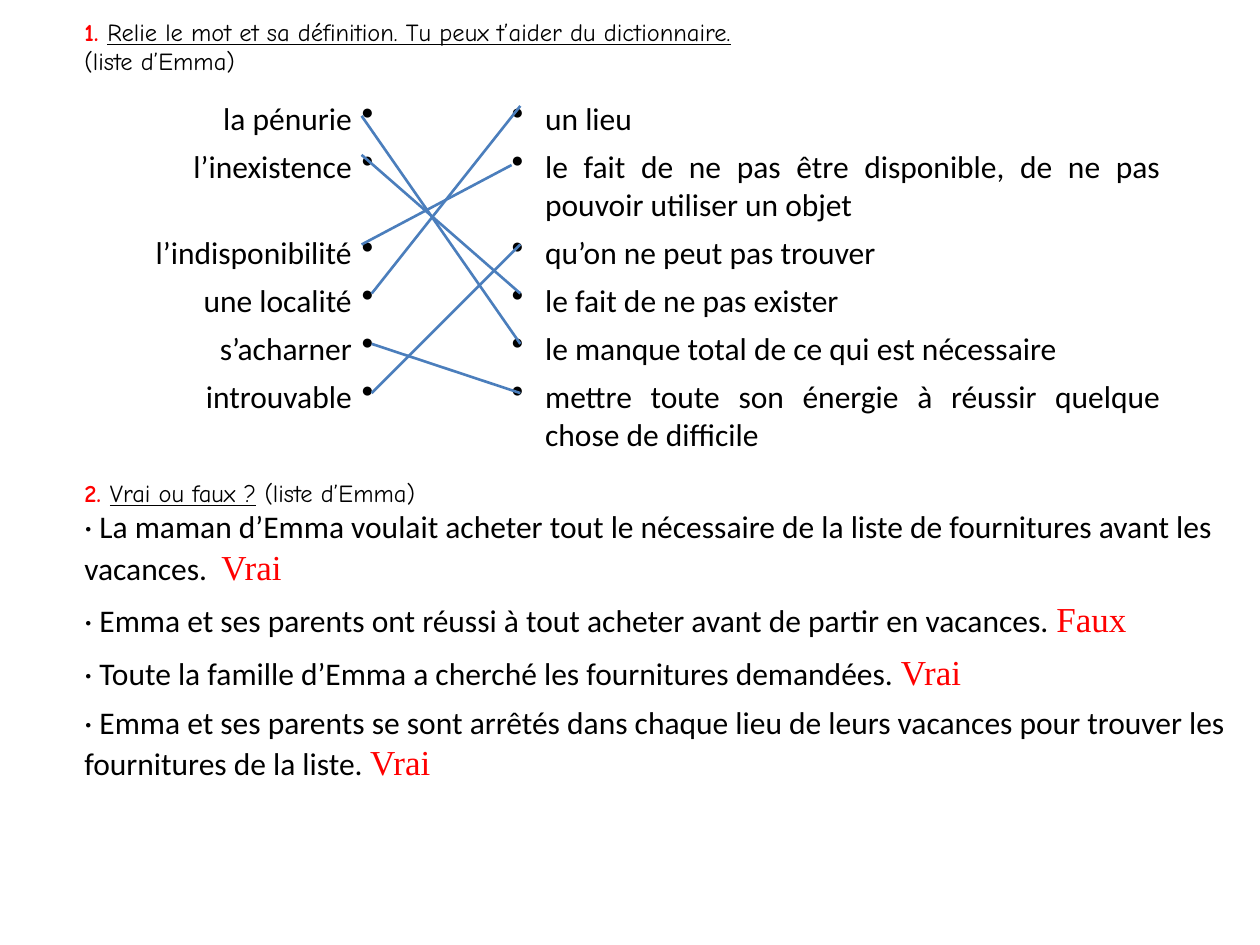
import pptx
import pptx.util
import pptx.dml.color
import pptx.enum.shapes
import pptx.enum.text
import pptx.oxml.ns
import lxml.etree

Pt = pptx.util.Pt
RGB = pptx.dml.color.RGBColor
ALIGN = pptx.enum.text.PP_ALIGN
BLACK = RGB(0x00, 0x00, 0x00)
RED = RGB(0xFF, 0x00, 0x00)
BLUE = RGB(0x4B, 0x7E, 0xBC)

LEFT = 48.24
COLS = [155.5, 13.7, 72, 19.4, 357.1]
ONE, TWO = 27.36, 49.25  # heights of rows with one and two lines
INSET = 2.7

ROWS = [
    ("la pénurie", "un lieu", ONE),
    ("l’inexistence", "le fait de ne pas être disponible, de ne pas pouvoir utiliser un objet", TWO),
    ("l’indisponibilité", "qu’on ne peut pas trouver", ONE),
    ("une localité", "le fait de ne pas exister", ONE),
    ("s’acharner", "le manque total de ce qui est nécessaire", ONE),
    ("introuvable", "mettre toute son énergie à réussir quelque chose de difficile", TWO),
]

# Start and end of each link, from the corner of the word table
LINKS = [
    (158.4, 11.5, 249.1, 141.8),
    (158.4, 33.8, 249.1, 113),
    (158.4, 85, 244.1, 39.6),
    (164.2, 113, 249.1, 5.8),
    (164.2, 141.8, 249.1, 169.9),
    (164.2, 169.9, 249.1, 85),
]

CLAIMS = [
    ("·\u00a0La maman d’Emma voulait acheter tout le nécessaire de la liste de fournitures avant les vacances.  ", "Vrai"),
    ("·\u00a0Emma et ses parents ont réussi à tout acheter avant de partir en vacances. ", "Faux"),
    ("·\u00a0Toute la famille d’Emma a cherché les fournitures demandées. ", "Vrai"),
    ("·\u00a0Emma et ses parents se sont arrêtés dans chaque lieu de leurs vacances pour trouver les fournitures de la liste. ", "Vrai"),
]


def write(para, text, size=18, font="Calibri", color=BLACK, bold=False, under=False):
    run = para.add_run()
    run.text = text
    run.font.size = Pt(size)
    run.font.name = font
    run.font.color.rgb = color
    run.font.bold = bold
    run.font.underline = under


def add_frame(slide, left, top, width, height):
    """Add a wrapping text box without margins and return its text frame."""
    frame = slide.shapes.add_textbox(Pt(left), Pt(top), Pt(width), Pt(height)).text_frame
    frame.word_wrap = True
    frame.vertical_anchor = pptx.enum.text.MSO_ANCHOR.MIDDLE
    frame.margin_left = frame.margin_right = 0
    frame.margin_top = frame.margin_bottom = 0
    return frame


def add_title(slide, left, top, width, height, number, title, source, split=False):
    """Add an exercise title; split puts the source on its own line."""
    frame = add_frame(slide, left, top, width, height)
    para = frame.paragraphs[0]
    write(para, number + " ", size=14, font="Comic Neue", color=RED, bold=True)
    write(para, title, size=14, font="Comic Neue", under=True)
    if split:
        para = frame.add_paragraph()
    else:
        source = " " + source
    write(para, source, size=14, font="Comic Neue")


def add_words(slide, left, top):
    height = sum(row[2] for row in ROWS)
    table = slide.shapes.add_table(
        len(ROWS), len(COLS), Pt(left), Pt(top), Pt(sum(COLS)), Pt(height)).table
    table.first_row = table.horz_banding = False
    for col, width in zip(table.columns, COLS):
        col.width = Pt(width)
    for row, (word, sense, tall) in zip(table.rows, ROWS):
        row.height = Pt(tall)
        for i, text in enumerate([word, "●", "", "●", sense]):
            cell = row.cells[i]
            cell.fill.background()
            cell.margin_left = cell.margin_right = Pt(INSET)
            cell.margin_top = cell.margin_bottom = Pt(INSET)
            para = cell.text_frame.paragraphs[0]
            para.alignment = ALIGN.RIGHT if i == 0 else ALIGN.JUSTIFY
            if text == "●":
                write(para, text, size=12, font="Arial")
            elif text:
                write(para, text)


def add_links(slide, left, top):
    for x1, y1, x2, y2 in LINKS:
        link = slide.shapes.add_connector(
            pptx.enum.shapes.MSO_CONNECTOR.STRAIGHT,
            Pt(left + x1), Pt(top + y1), Pt(left + x2), Pt(top + y2))
        link.line.color.rgb = BLUE
        link.line.width = Pt(1.5)
        lxml.etree.SubElement(link._element.spPr, pptx.oxml.ns.qn("a:effectLst"))


def add_claims(slide, left, top, width, height):
    frame = add_frame(slide, left, top, width, height)
    for i, (claim, answer) in enumerate(CLAIMS):
        para = frame.add_paragraph() if i else frame.paragraphs[0]
        para.space_after = Pt(6)
        write(para, claim)
        write(para, answer, size=20, font="Times New Roman", color=RED)


def main():
    deck = pptx.Presentation()
    deck.slide_width, deck.slide_height = Pt(720), Pt(540)
    slide = deck.slides.add_slide(deck.slide_layouts[6])
    add_title(slide, LEFT, 9.4, 661, 33.8, "1.",
              "Relie le mot et sa définition. Tu peux t’aider du dictionnaire.",
              "(liste d’Emma)", split=True)
    add_words(slide, LEFT, 54.72)
    add_links(slide, LEFT, 54.72)
    add_title(slide, LEFT, 272.9, 663, 17.3, "2.", "Vrai ou faux ?", "(liste d’Emma)")
    add_claims(slide, LEFT, 289.4, 657.4, 158.4)
    deck.save("out.pptx")


if __name__ == "__main__":
    main()
